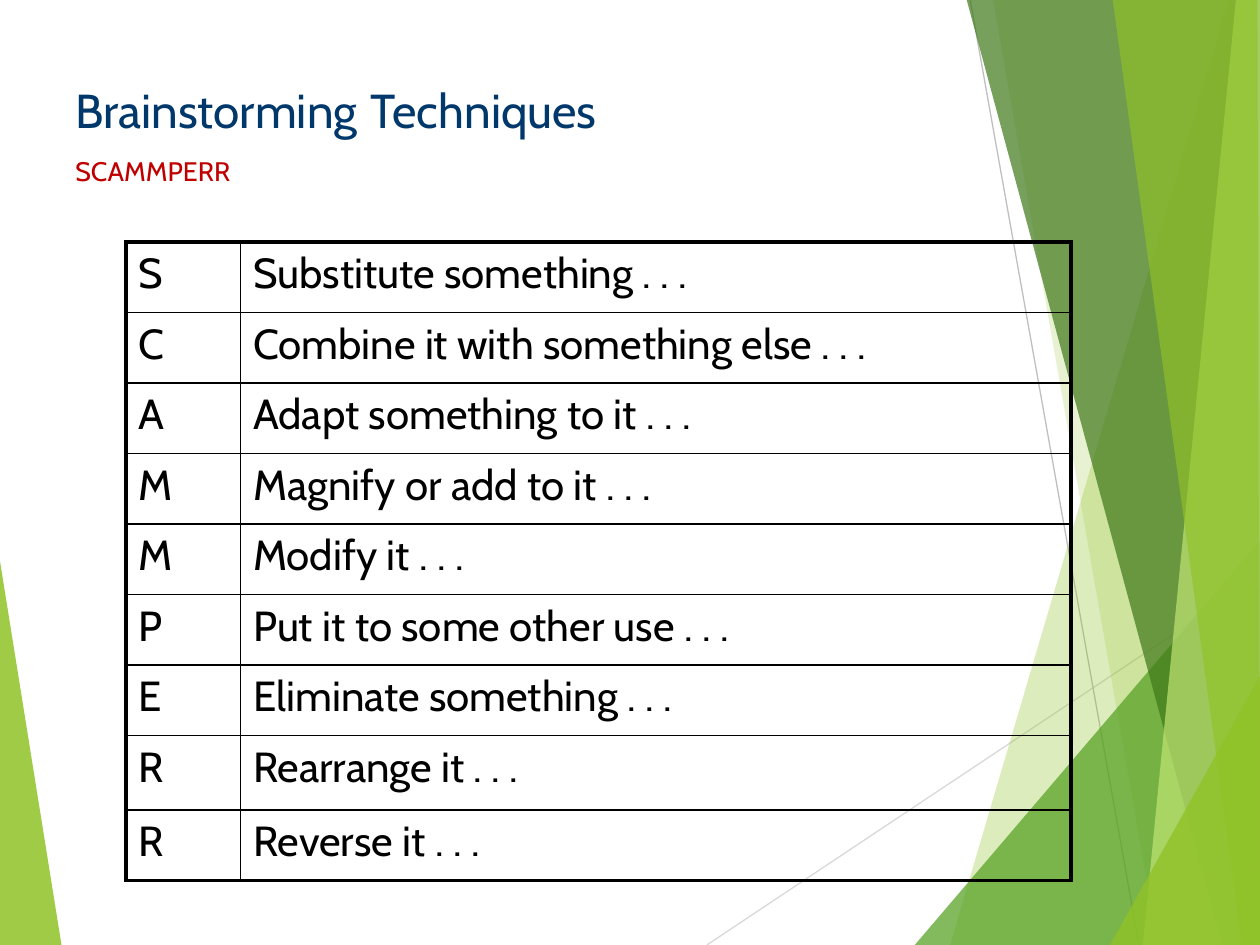
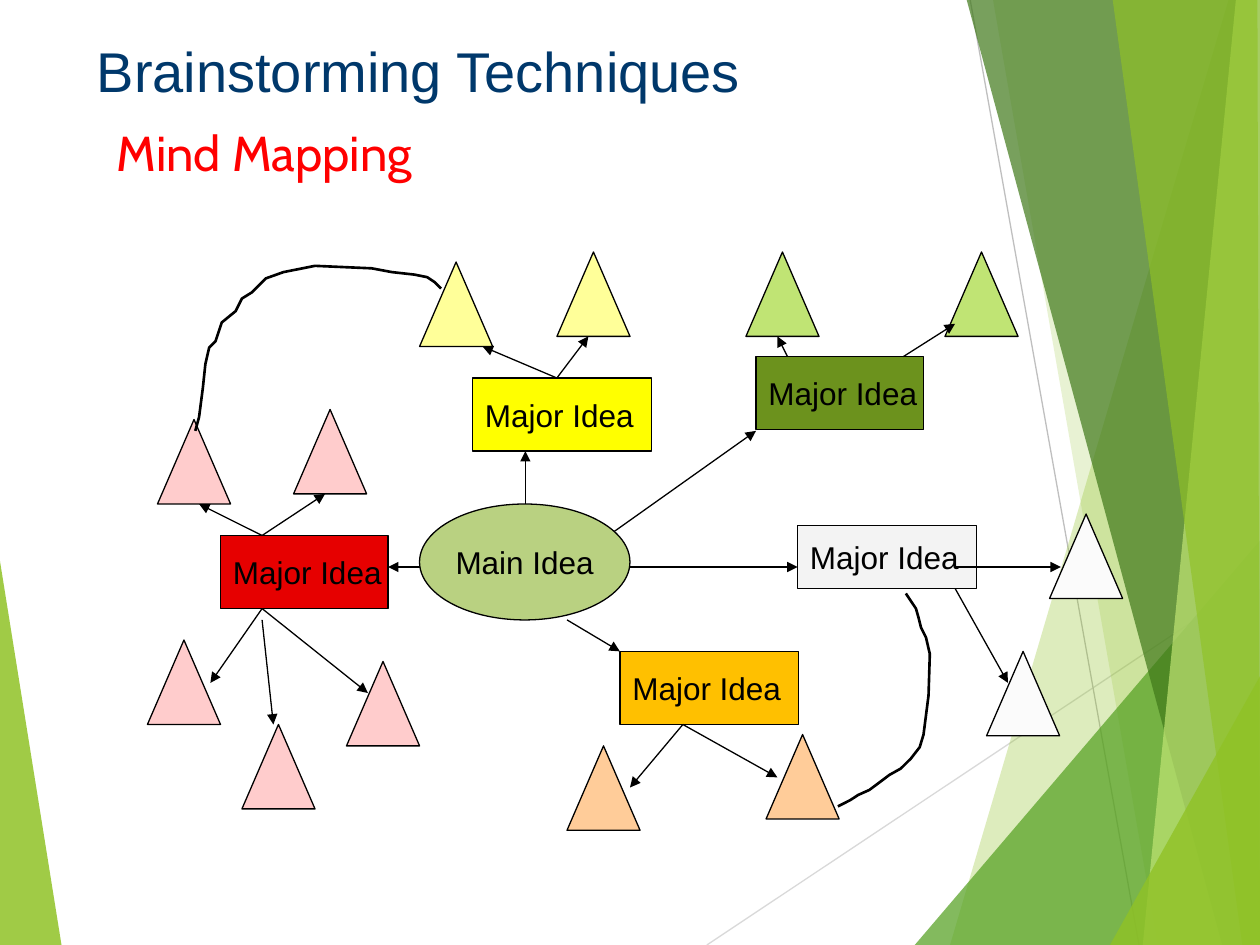
from lxml.etree import SubElement
from pptx import Presentation
from pptx.dml.color import RGBColor as Rgb
from pptx.enum.shapes import MSO_CONNECTOR as Conn, MSO_SHAPE as Shape
from pptx.enum.text import MSO_ANCHOR as Anchor, PP_ALIGN as Align
from pptx.oxml.ns import qn
from pptx.util import Inches, Pt

HEX = {
    "black": "000000", "navy": "00386B", "crimson": "C00000", "bright": "FF0000",
    "lime": "90C226", "leaf": "54A021", "forest": "3F7819", "pale": "C0E474",
    "silver": "D9D9D9", "grey": "BFBFBF",
    "olive": "6C921D", "mist": "F3F3F3", "snow": "FBFBFB", "yellow": "FFFF00",
    "cream": "FFFF99", "red": "E60000", "pink": "FFCCCC", "amber": "FFC000",
    "peach": "FFCC99", "sage": "B9D181",
}
TITLE = "Brainstorming Techniques"
BODY, SANS = "Cabin", "Arial"

# Backdrop facets: colour, opacity in percent, corners
WEDGE = ("lime", 85, [(-0.01, 4.39), (0.49, 7.51), (-0.01, 7.5)])
FACETS = [
    ("lime", 30, [(9.75, 0), (7.54, 7.5), (10.02, 7.51), (10.01, 0)]),
    ("lime", 20, [(7.88, -0.01), (9.19, 7.5), (10.01, 7.5), (10.01, -0.01)]),
    ("leaf", 72, [(7.26, 7.5), (10, 4.29), (10.01, 7.5)]),
    ("forest", 70, [(7.67, -0.01), (9.7, 7.5), (10.01, 7.5), (10.01, -0.01)]),
    ("pale", 70, [(9.81, -0.01), (9.07, 7.5), (10.01, 7.5), (10, -0.01)]),
    ("lime", 65, [(8.83, -0.01), (9.86, 7.5), (10, 7.5), (9.98, -0.01)]),
    ("lime", 80, [(8.81, 7.5), (10.01, 5.35), (10.01, 7.5)]),
]

STEPS = [
    ("S", "Substitute something . . ."),
    ("C", "Combine it with something else . . ."),
    ("A", "Adapt something to it . . ."),
    ("M", "Magnify or add to it . . ."),
    ("M", "Modify it . . ."),
    ("P", "Put it to some other use . . ."),
    ("E", "Eliminate something . . ."),
    ("R", "Rearrange it . . ."),
    ("R", "Reverse it . . ."),
]

# Mind map, relative to its box: fill, box, leaf fill, leaf corners, arrows
IDEAS = [
    ("olive", (5, 0.83, 1.33, 0.58), "pale", [(4.92, 0), (6.5, 0)],
     [(6.17, 0.83, 6.58, 0.57), (5.25, 0.83, 5.17, 0.67)]),
    ("mist", (5.33, 2.17, 1.42, 0.5), "snow", [(6.83, 3.17), (7.33, 2.08)],
     [(6.58, 2.5, 7.42, 2.5), (6.58, 2.67, 7, 3.42)]),
    ("yellow", (2.75, 1, 1.42, 0.58), "cream", [(3.42, 0), (2.33, 0.08)],
     [(3.42, 1, 3.67, 0.67), (3.42, 1, 2.83, 0.75)]),
    ("red", (0.75, 2.25, 1.33, 0.58), "pink",
     [(1.75, 3.25), (0.92, 3.75), (1.33, 1.25), (0.25, 1.33), (0.17, 3.08)],
     [(1.08, 2.25, 0.58, 2), (1.08, 2.25, 1.58, 1.92), (1.08, 2.83, 0.67, 3.42),
      (1.08, 2.83, 1.92, 3.5), (1.08, 2.92, 1.17, 3.75)]),
    ("amber", (3.92, 3.17, 1.42, 0.58), "peach", [(3.5, 3.92), (5.08, 3.83)],
     [(4.42, 3.75, 4, 4.25), (4.42, 3.75, 5.17, 4.17)]),
]
SPOKES = [(2.33, 2.5, 2.08, 2.5), (3.17, 2, 3.17, 1.58), (3.83, 2.25, 5, 1.42),
          (4, 2.5, 5.33, 2.5), (3.5, 2.92, 3.92, 3.17)]
LINKS = [
    [(6.19, 2.71), (6.27, 2.83), (6.29, 2.9), (6.31, 2.98), (6.35, 3.06),
     (6.38, 3.19), (6.37, 3.52), (6.33, 3.83), (6.3, 3.93), (6.23, 4.02),
     (6.15, 4.1), (6.06, 4.15), (5.98, 4.21), (5.9, 4.27), (5.81, 4.31),
     (5.75, 4.35), (5.69, 4.38), (5.65, 4.4)],
    [(0.55, 1.42), (0.58, 1.31), (0.61, 1.08), (0.63, 0.89), (0.66, 0.76),
     (0.71, 0.71), (0.76, 0.56), (0.87, 0.47), (0.92, 0.37), (1, 0.32),
     (1.11, 0.21), (1.25, 0.16), (1.5, 0.11), (1.95, 0.13), (2.11, 0.16),
     (2.29, 0.18), (2.39, 0.2), (2.45, 0.24), (2.5, 0.29)],
]


def rgb(name):
    return Rgb.from_string(HEX[name])


def style(run, size, color, face):
    font = run.font
    font.size, font.name = Pt(size), face
    font.color.rgb = rgb(color)


def outline(slide, points, close=True):
    pts = [(Inches(x), Inches(y)) for x, y in points]
    pen = slide.shapes.build_freeform(*pts[0], scale=1.0)
    pen.add_line_segments(pts[1:], close=close)
    shape = pen.convert_to_shape()
    shape.shadow.inherit = False
    return shape


def facet(slide, color, alpha, points):
    shape = outline(slide, points)
    shape.fill.solid()
    shape.fill.fore_color.rgb = rgb(color)
    shape.line.fill.background()
    tint = shape.element.spPr.find(qn("a:solidFill"))[0]
    SubElement(tint, qn("a:alpha"), val=str(alpha * 1000))


def link(slide, ends, color="black", arrow=False):
    line = slide.shapes.add_connector(Conn.STRAIGHT, *map(Inches, ends))
    line.line.width = Pt(0.75)
    line.line.color.rgb = rgb(color)
    props = line.element.spPr
    if arrow:
        SubElement(props.find(qn("a:ln")), qn("a:tailEnd"), type="triangle")
    SubElement(props, qn("a:effectLst"))


def node(slide, kind, box, color, text=""):
    shape = slide.shapes.add_shape(kind, *map(Inches, box))
    shape.shadow.inherit = False
    shape.fill.solid()
    shape.fill.fore_color.rgb = rgb(color)
    shape.line.color.rgb = rgb("black")
    shape.line.width = Pt(0.75)
    if text:
        frame = shape.text_frame
        frame.text, frame.word_wrap = text, False
        frame.vertical_anchor = Anchor.MIDDLE
        para = frame.paragraphs[0]
        para.alignment = Align.CENTER if kind == Shape.OVAL else Align.LEFT
        style(para.runs[0], 18, "black", SANS)


def label(slide, box, text, size, color, face, anchor=Anchor.TOP):
    frame = slide.shapes.add_textbox(*map(Inches, box)).text_frame
    frame.word_wrap, frame.vertical_anchor = True, anchor
    frame.text = text
    style(frame.paragraphs[0].runs[0], size, color, face)
    return frame


def backdrop(slide):
    facet(slide, *WEDGE)
    link(slide, (5.61, 7.5, 10.01, 4.57), "silver")
    link(slide, (7.7, 0, 9.04, 7.5), "grey")
    for part in FACETS:
        facet(slide, *part)


def heading(slide, box):
    first, last = TITLE.split()
    frame = label(slide, box, first, 27.2, "navy", BODY)
    # The wide space sets the height of the first line
    for text, size in ((" ", 34), (last, 27.2)):
        run = frame.paragraphs[0].add_run()
        run.text = text
        style(run, size, "navy", BODY)
    para = frame.add_paragraph()
    para.text, para.space_before = "SCAMMPERR", Pt(8)
    style(para.runs[0], 15.3, "crimson", BODY)


def border(cell, sides):
    props = cell._tc.get_or_add_tcPr()
    for side, width in sides.items():
        line = SubElement(props, qn("a:ln" + side), w=str(Pt(width)))
        fill = SubElement(line, qn("a:solidFill"))
        SubElement(fill, qn("a:srgbClr"), val=HEX["black"])


def steps(slide, box):
    grid = slide.shapes.add_table(len(STEPS), 2, *map(Inches, box)).table
    grid.first_row = grid.horz_banding = False
    grid.columns[0].width = Inches(0.91)
    grid.columns[1].width = Inches(box[2] - 0.91)
    end = len(STEPS) - 1
    for i, texts in enumerate(STEPS):
        grid.rows[i].height = Inches(0.59 if i == end - 1 else 0.56)
        for j, text in enumerate(texts):
            cell = grid.cell(i, j)
            cell.text = text
            style(cell.text_frame.paragraphs[0].runs[0], 24, "black", BODY)
            # Heavy frame, thin inner rules
            edges = {"L": j == 0, "R": j == 1, "T": i == 0, "B": i == end}
            border(cell, {k: 2.25 if v else 1 for k, v in edges.items()})
            cell.fill.background()


def mindmap(slide, left, top):
    def place(x, y, *size):
        return (left + x, top + y, *size)

    def arrows(lines):
        for x1, y1, x2, y2 in lines:
            link(slide, place(x1, y1) + place(x2, y2), arrow=True)

    # Major ideas with their leaves
    for color, box, tint, leaves, lines in IDEAS:
        node(slide, Shape.RECTANGLE, place(*box), color, "Major Idea")
        for x, y in leaves:
            node(slide, Shape.ISOSCELES_TRIANGLE, place(x, y, 0.58, 0.67), tint)
        arrows(lines)
    # Main idea
    arrows(SPOKES)
    node(slide, Shape.OVAL, place(2.33, 2, 1.67, 0.92), "sage", "Main Idea")
    # Hand-drawn links between leaves
    for points in LINKS:
        curve = outline(slide, [place(*p) for p in points], close=False)
        curve.fill.background()
        curve.line.color.rgb = rgb("black")
        curve.line.width = Pt(1.5)


def scamper(slide):
    backdrop(slide)
    heading(slide, (0.5, 0.5, 9, 0.92))
    steps(slide, (1, 1.92, 7.5, 5.03))


def mapping(slide):
    backdrop(slide)
    label(slide, (0.83, 0.92, 4.83, 0.75), "Mind Mapping", 28, "bright", BODY)
    mindmap(slide, 1, 2)
    label(slide, (0.67, 0.17, 9, 0.78), TITLE, 32, "navy", SANS, Anchor.MIDDLE)


def main():
    deck = Presentation()
    deck.slide_width, deck.slide_height = Inches(10), Inches(7.5)
    for build in (scamper, mapping):
        build(deck.slides.add_slide(deck.slide_layouts[6]))
    deck.save("out.pptx")


if __name__ == "__main__":
    main()
